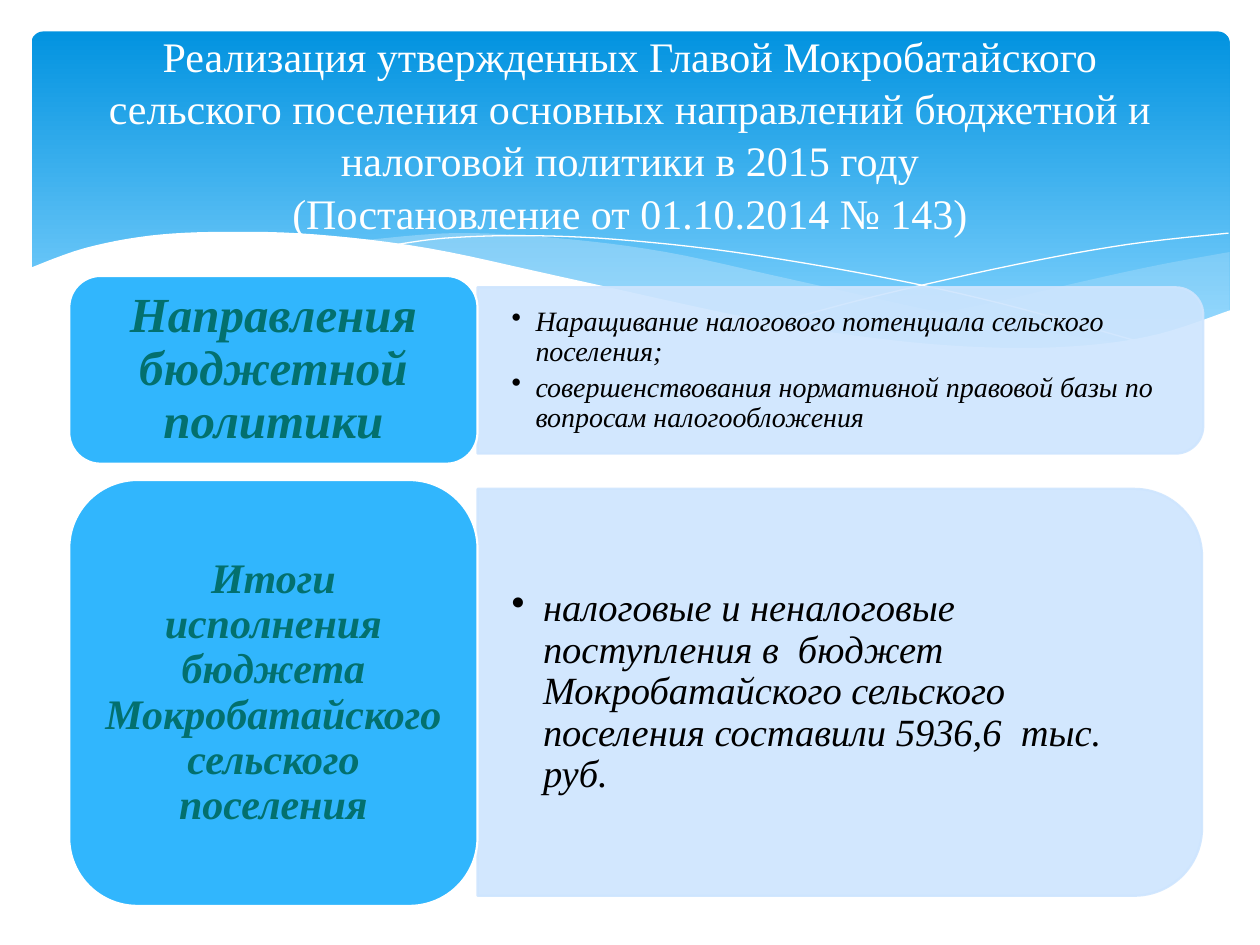
from dataclasses import dataclass

from lxml.etree import SubElement
from pptx import Presentation
from pptx.dml.color import RGBColor
from pptx.enum.shapes import MSO_SHAPE
from pptx.enum.text import MSO_ANCHOR, PP_ALIGN
from pptx.oxml.ns import qn
from pptx.util import Inches, Pt

COLUMNS, ROWS = 100, 75
CORNER = 0.16667
CORNER_INSET = 0.29  # share of a corner radius that text keeps clear of


@dataclass(frozen=True)
class Theme:
    font: str = "Times New Roman"
    sky_top: str = "0293E0"
    sky_bottom: str = "83D3FE"
    wave: str = "C6E7FC"
    white: str = "FFFFFF"
    label: str = "31B6FD"
    label_text: str = "03706E"
    panel: str = "CEE5FE"
    panel_text: str = "000000"
    title_size: int = 24
    outline: float = 1.25


def smooth_curve(points, steps=6):
    """Catmull-Rom curve through the points."""
    padded = [points[0], *points, points[-1]]
    curve = [points[0]]
    for a, b, c, d in zip(padded, padded[1:], padded[2:], padded[3:]):
        for step in range(1, steps + 1):
            t = step / steps
            curve.append(tuple(
                (2 * q + (r - p) * t + (2 * p - 5 * q + 4 * r - s) * t ** 2
                 + (3 * q - p - 3 * r + s) * t ** 3) / 2
                for p, q, r, s in zip(a, b, c, d)))
    return curve


class SlideBuilder:
    """Draws on a grid of COLUMNS by ROWS cells."""

    def __init__(self, presentation, theme):
        self.theme = theme
        self.cell_width = presentation.slide_width / COLUMNS
        self.cell_height = presentation.slide_height / ROWS
        self.slide = presentation.slides.add_slide(presentation.slide_layouts[6])

    def place(self, column, row):
        return round(column * self.cell_width), round(row * self.cell_height)

    def paint(self, shape, fill=None, opacity=100, line=None, width=0):
        shape.shadow.inherit = False
        if fill:
            shape.fill.solid()
            shape.fill.fore_color.rgb = RGBColor.from_string(fill)
        else:
            shape.fill.background()
        if line:
            shape.line.color.rgb = RGBColor.from_string(line)
            shape.line.width = Pt(width)
        else:
            shape.line.fill.background()
        if opacity < 100:
            for color in shape._element.spPr.iter(qn("a:srgbClr")):
                SubElement(color, qn("a:alpha"), val=str(opacity * 1000))

    def set_text(self, shape, texts, size, color, insets, align=PP_ALIGN.CENTER,
                 spacing=0.9, after=0, bold=False, italic=False):
        frame = shape.text_frame
        frame.word_wrap = True
        frame.vertical_anchor = MSO_ANCHOR.MIDDLE
        frame.margin_left = frame.margin_right = Inches(insets[0])
        frame.margin_top = frame.margin_bottom = Inches(insets[1])
        for index, text in enumerate(texts):
            paragraph = frame.add_paragraph() if index else frame.paragraphs[0]
            paragraph.text = text
            paragraph.alignment = align
            paragraph.line_spacing = spacing
            paragraph.space_after = Pt(after)
            font = paragraph.font
            font.name, font.size = self.theme.font, Pt(size)
            font.bold, font.italic = bold, italic
            font.color.rgb = RGBColor.from_string(color)
        return frame.paragraphs

    def sky(self, column, row, columns, rows):
        shape = self.slide.shapes.add_shape(
            MSO_SHAPE.ROUNDED_RECTANGLE,
            *self.place(column, row), *self.place(columns, rows))
        shape.adjustments[0] = 0.034
        self.paint(shape)
        shape.fill.gradient()
        shape.fill.gradient_angle = 270
        stops = shape.fill.gradient_stops
        for stop, position, color in zip(
                stops, (0, 0.9), (self.theme.sky_top, self.theme.sky_bottom)):
            stop.position = position
            stop.color.rgb = RGBColor.from_string(color)

    def wave(self, *edges, closed=True, **look):
        """Joins smooth edges into one outline."""
        points = [self.place(*point) for edge in edges for point in smooth_curve(edge)]
        builder = self.slide.shapes.build_freeform(*points[0])
        builder.add_line_segments(points[1:], close=closed)
        self.paint(builder.convert_to_shape(), **look)

    def label(self, column, row, columns, rows, text, size, insets):
        shape = self.slide.shapes.add_shape(
            MSO_SHAPE.ROUNDED_RECTANGLE,
            *self.place(column, row), *self.place(columns, rows))
        shape.adjustments[0] = CORNER
        self.paint(shape, self.theme.label, line=self.theme.white, width=self.theme.outline)
        self.set_text(shape, [text], size, self.theme.label_text, insets,
                      bold=True, italic=True)

    def panel(self, column, row, columns, rows, texts, size, indent):
        """Box rounded on its right side, with a bulleted list over it."""
        left, top = self.place(column + (columns - rows) / 2, row + (rows - columns) / 2)
        shape = self.slide.shapes.add_shape(
            MSO_SHAPE.ROUND_2_SAME_RECTANGLE, left, top, *self.place(rows, columns))
        shape.rotation = 90
        self.paint(shape, self.theme.panel, 90, self.theme.panel, self.theme.outline)

        clear = CORNER_INSET * CORNER * rows
        box = self.slide.shapes.add_textbox(
            *self.place(column, row + clear),
            *self.place(columns - clear, rows - 2 * clear))
        for paragraph in self.set_text(box, texts, size, self.theme.panel_text, (0.27, 0.14),
                                       PP_ALIGN.LEFT, after=size * 0.18, italic=True):
            properties = paragraph._p.get_or_add_pPr()
            properties.set("marL", str(Inches(indent)))
            properties.set("indent", str(-Inches(indent)))
            bullet = SubElement(properties, qn("a:buChar"), char="•")
            properties.find(qn("a:defRPr")).addprevious(bullet)

    def title(self, column, row, columns, rows, text):
        box = self.slide.shapes.add_textbox(
            *self.place(column, row), *self.place(columns, rows))
        self.set_text(box, [text], self.theme.title_size, self.theme.white,
                      (0.1, 0.05), spacing=1.04)


def draw_header(builder):
    theme = builder.theme
    builder.sky(2.5, 2.5, 95.1, 27)
    builder.wave(
        [(97.6, 20), (92.1, 21), (86.1, 22.3), (77.9, 24.2), (66.1, 26.5)],
        [(66.1, 26.5), (74.5, 27.5), (81.4, 27.8), (88.1, 27.4), (93.5, 26.2), (97.6, 24.7)],
        fill=theme.wave, opacity=29)
    builder.wave(
        [(89.3, 27.3), (77.5, 25.4), (62.9, 22.2), (52.8, 20), (44.2, 18.9),
         (36.1, 18.5), (28.6, 19.1)],
        [(28.6, 19.1), (36.2, 20.3), (44.9, 22.2), (56.6, 24.8), (66.5, 26.6),
         (74.8, 27.6), (81.8, 27.8), (89.3, 27.3)],
        fill=theme.wave, opacity=40)
    builder.wave(
        [(30.9, 19.5), (35.3, 18.9), (41.6, 18.7), (48.9, 19), (58.2, 20),
         (69.5, 21.9), (79.5, 24.1), (90.7, 27.2)],
        closed=False, line=theme.white)
    builder.wave(
        [(61.3, 25.7), (69.5, 23.5), (80.6, 21), (89.5, 19.4), (97.5, 18.5)],
        closed=False, line=theme.white)
    builder.wave(
        [(97.7, 24.6), (92, 26.5), (86.3, 27.4), (79.3, 27.6), (70.8, 27),
         (60.3, 25.4), (44.7, 22), (34, 19.7), (25, 18.6), (17.7, 18.4),
         (11.9, 18.7), (6.7, 19.7), (2.3, 21.3)],
        [(2.3, 32.9), (97.7, 32.9)],
        fill=theme.white)


def main():
    presentation = Presentation()
    presentation.slide_width, presentation.slide_height = Inches(10), Inches(7.5)
    builder = SlideBuilder(presentation, Theme())
    draw_header(builder)

    builder.panel(37.9, 22.8, 57.6, 13.2, [
        "Наращивание налогового потенциала сельского поселения;",
        "совершенствования нормативной правовой базы по вопросам налогообложения",
    ], size=16, indent=0.19)
    builder.label(5.5, 21.9, 32.4, 14.9, "Направления бюджетной политики",
                  size=28, insets=(0.12, 0.06))

    builder.panel(37.9, 38.8, 57.5, 32.3, [
        "налоговые и неналоговые поступления в  бюджет Мокробатайского "
        "сельского поселения составили 5936,6  тыс. руб.",
    ], size=22, indent=0.25)
    builder.label(5.5, 38.1, 32.4, 33.8,
                  "Итоги исполнения бюджета Мокробатайского сельского поселения",
                  size=24, insets=(0.1, 0.05))

    builder.title(5, 3.7, 90, 13.7,
                  "Реализация утвержденных Главой Мокробатайского сельского поселения "
                  "основных направлений бюджетной и налоговой политики в 2015 году\v"
                  "(Постановление от 01.10.2014 № 143)")
    presentation.save("out.pptx")


if __name__ == "__main__":
    main()
